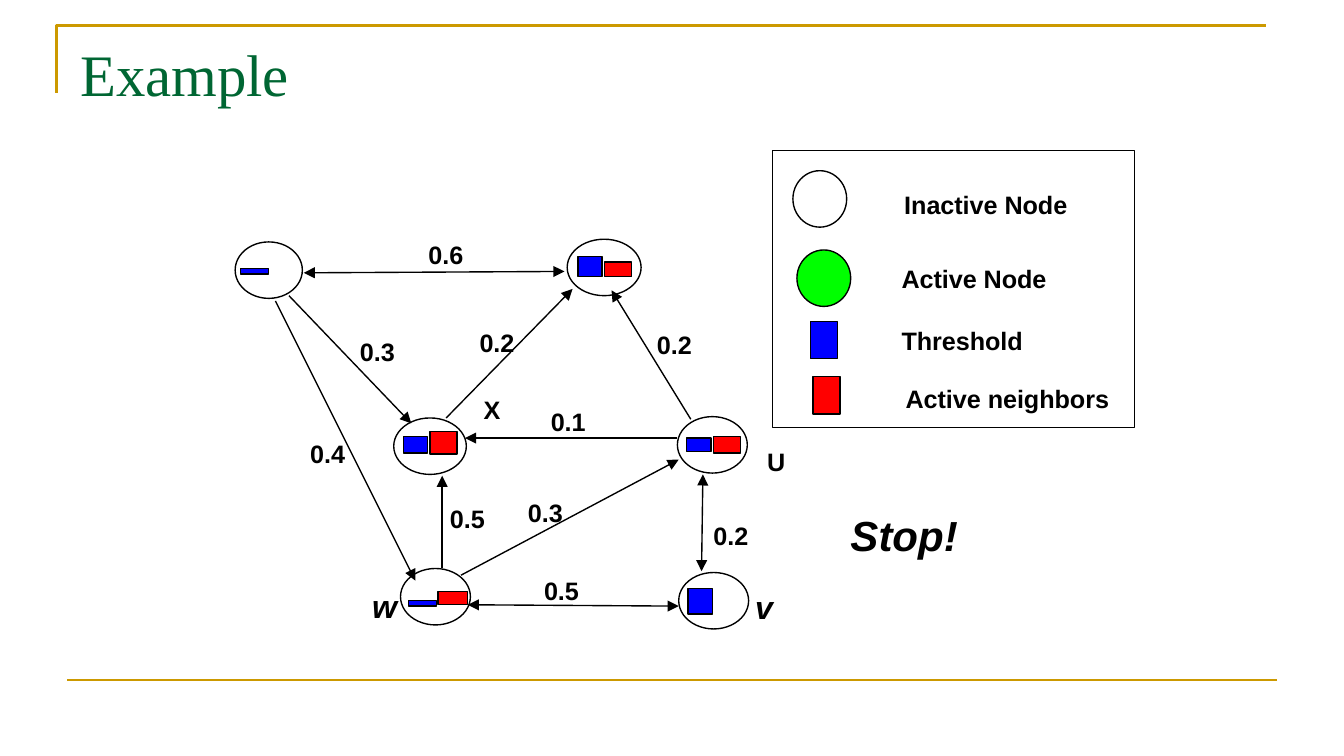
import pptx
import pptx.dml.color
import pptx.enum.shapes
import pptx.enum.text
import pptx.util
from lxml import etree
from pptx.oxml.ns import qn

Inches = pptx.util.Inches
Pt = pptx.util.Pt
SHAPE = pptx.enum.shapes.MSO_SHAPE
ANCHOR = pptx.enum.text.MSO_ANCHOR
BLACK, WHITE, GOLD, TITLE = "000000", "FFFFFF", "CC9900", "006633"
THRESHOLD, NEIGHBORS, ACTIVE = "0000FF", "FF0000", "00FF00"

LABEL = {"name": "Arial", "size": Pt(13.5), "bold": True}
LETTER = {"name": "Arial", "size": Pt(17.2), "bold": True, "italic": True}
STOP = {**LETTER, "size": Pt(22.5)}
HEADING = {"name": "Times New Roman", "size": Pt(31.5)}

# Box of each node, then its bars as (colour, dx, dy, width, height)
NODES = [
    ((1.75, 1.8, 0.5, 0.42), [(THRESHOLD, 0.04, 0.2, 0.21, 0.04)]),
    ((4.22, 1.78, 0.55, 0.42), [(THRESHOLD, 0.08, 0.13, 0.18, 0.15),
                                (NEIGHBORS, 0.28, 0.17, 0.2, 0.11)]),
    ((2.93, 3.11, 0.54, 0.42), [(THRESHOLD, 0.07, 0.14, 0.18, 0.12),
                                (NEIGHBORS, 0.27, 0.1, 0.2, 0.17)]),
    ((5.04, 3.1, 0.52, 0.42), [(THRESHOLD, 0.07, 0.16, 0.18, 0.1),
                               (NEIGHBORS, 0.27, 0.15, 0.2, 0.12)]),
    ((2.98, 4.23, 0.52, 0.42), [(THRESHOLD, 0.06, 0.24, 0.21, 0.04),
                                (NEIGHBORS, 0.28, 0.17, 0.22, 0.1)]),
    ((5.05, 4.26, 0.52, 0.42), [(THRESHOLD, 0.07, 0.12, 0.18, 0.19)]),
]

# Start, end, arrowheads at both ends, weight, left and top of the weight
EDGES = [
    ((3.48, 4.5), (5.05, 4.51), True, "0.5", (3.95, 4.23)),
    ((3.43, 4.28), (5.05, 3.42), False, "0.3", (3.83, 3.65)),
    ((3.29, 4.23), (3.29, 3.54), False, "0.5", (3.25, 3.69)),
    ((5.04, 3.26), (3.46, 3.26), False, "0.1", (4, 2.97)),
    ((2.05, 2.24), (3.09, 4.32), False, "0.4", (2.21, 3.21)),
    ((2.15, 2.2), (3.06, 3.15), False, "0.3", (2.58, 2.45)),
    ((3.32, 3.11), (4.26, 2.15), False, "0.2", (3.47, 2.38)),
    ((2.26, 2.03), (4.2, 2.02), True, "0.6", (3.09, 1.73)),
    ((5.14, 3.12), (4.55, 2.16), False, "0.2", (4.79, 2.4)),
    ((5.23, 3.53), (5.22, 4.25), True, "0.2", (5.21, 3.82)),
]

NAMES = [
    ("X", (3.5, 2.88, 0.33, 0.33), LABEL),
    ("U", (5.61, 3.27, 0.33, 0.33), LABEL),
    ("w", (2.67, 4.31, 0.28, 0.39), LETTER),
    ("v", (5.52, 4.32, 0.26, 0.39), LETTER),
]

# Symbol, fill, symbol box and text box, relative to the legend
LEGEND = [
    (SHAPE.OVAL, WHITE, (0.15, 0.15, 0.4, 0.42), "Inactive Node", (0.88, 0.24, 1.43, 0.33)),
    (SHAPE.OVAL, ACTIVE, (0.18, 0.74, 0.4, 0.42), "Active Node", (0.86, 0.79, 1.3, 0.33)),
    (SHAPE.RECTANGLE, THRESHOLD, (0.28, 1.27, 0.2, 0.28), "Threshold", (0.86, 1.25, 1.12, 0.33)),
    (SHAPE.RECTANGLE, NEIGHBORS, (0.3, 1.68, 0.2, 0.28), "Active neighbors",
     (0.89, 1.68, 1.74, 0.33)),
]


def rgb(color):
    return pptx.dml.color.RGBColor.from_string(color)


def inches(values):
    return [Inches(v) for v in values]


def shift(box, origin):
    x, y, w, h = box
    return origin[0] + x, origin[1] + y, w, h


def style_line(line, color=BLACK, width=0.75):
    line.color.rgb = rgb(color)
    line.width = Pt(width)


def add_shape(slide, kind, box, fill=None):
    sp = slide.shapes.add_shape(kind, *inches(box))
    sp.shadow.inherit = False
    if fill:
        sp.fill.solid()
        sp.fill.fore_color.rgb = rgb(fill)
    else:
        sp.fill.background()
    style_line(sp.line)
    return sp


def add_text(slide, text, box, font, color=BLACK, wrap=True, anchor=ANCHOR.MIDDLE):
    tf = slide.shapes.add_textbox(*inches(box)).text_frame
    tf.word_wrap = wrap
    tf.vertical_anchor = anchor
    r = tf.paragraphs[0].add_run()
    r.text = text
    for name, value in font.items():
        setattr(r.font, name, value)
    r.font.color.rgb = rgb(color)


def add_line(slide, start, end, heads=(), **style):
    """Draw a straight line; heads lists "headEnd" (start) and "tailEnd" (end)."""
    line = slide.shapes.add_connector(
        pptx.enum.shapes.MSO_CONNECTOR.STRAIGHT, *inches(start + end))
    style_line(line.line, **style)
    ln = line.line._get_or_add_ln()
    for head in heads:
        etree.SubElement(ln, qn(f"a:{head}"), type="triangle")
    etree.SubElement(line._element.spPr, qn("a:effectLst"))


def add_frame(slide, box):
    """Draw the title, the gold corner rule above it and the rule at the foot."""
    x, y, w, h = box
    corner = inches((x, y + 0.5, x, y, x + w, y))
    fb = slide.shapes.build_freeform(corner[0], corner[1])
    fb.add_line_segments([(corner[2], corner[3]), (corner[4], corner[5])], close=False)
    sp = fb.convert_to_shape()
    sp.shadow.inherit = False
    sp.fill.background()
    style_line(sp.line, GOLD, 1.5)
    foot = y + h
    add_line(slide, (x + 0.08, foot), (x + 0.08 + w, foot), color=GOLD, width=1.5)
    add_text(slide, "Example", (x + 0.08, y + 0.04, w, 0.93), HEADING, TITLE,
             anchor=ANCHOR.TOP)


def add_legend(slide, box):
    add_shape(slide, SHAPE.RECTANGLE, box)
    for kind, fill, symbol, text, text_box in LEGEND:
        add_shape(slide, kind, shift(symbol, box), fill)
        add_text(slide, text, shift(text_box, box), LABEL, wrap=False)


def add_node(slide, box, bars):
    add_shape(slide, SHAPE.OVAL, box, WHITE)
    for color, *bar in bars:
        add_shape(slide, SHAPE.RECTANGLE, shift(bar, box), color)


def add_graph(slide, origin):
    x, y = origin
    for box, bars in NODES:
        add_node(slide, shift(box, origin), bars)
    for start, end, both, weight, corner in EDGES:
        heads = ("headEnd", "tailEnd") if both else ("tailEnd",)
        add_line(slide, (x + start[0], y + start[1]), (x + end[0], y + end[1]), heads)
        add_text(slide, weight, shift((*corner, 0.5, 0.33), origin), LABEL)
    for name, box, font in NAMES:
        add_text(slide, name, shift(box, origin), font)


def main():
    prs = pptx.Presentation()
    prs.slide_width = Inches(10)
    prs.slide_height = prs.slide_width * 9 // 16
    slide = prs.slides.add_slide(prs.slide_layouts[6])
    add_frame(slide, (0.42, 0.19, 9, 4.87))
    add_legend(slide, (5.75, 1.12, 2.69, 2.06))
    add_graph(slide, (0, 0))
    add_text(slide, "Stop!", (6.23, 3.74, 1.07, 0.48), STOP)
    prs.save("out.pptx")


if __name__ == "__main__":
    main()
